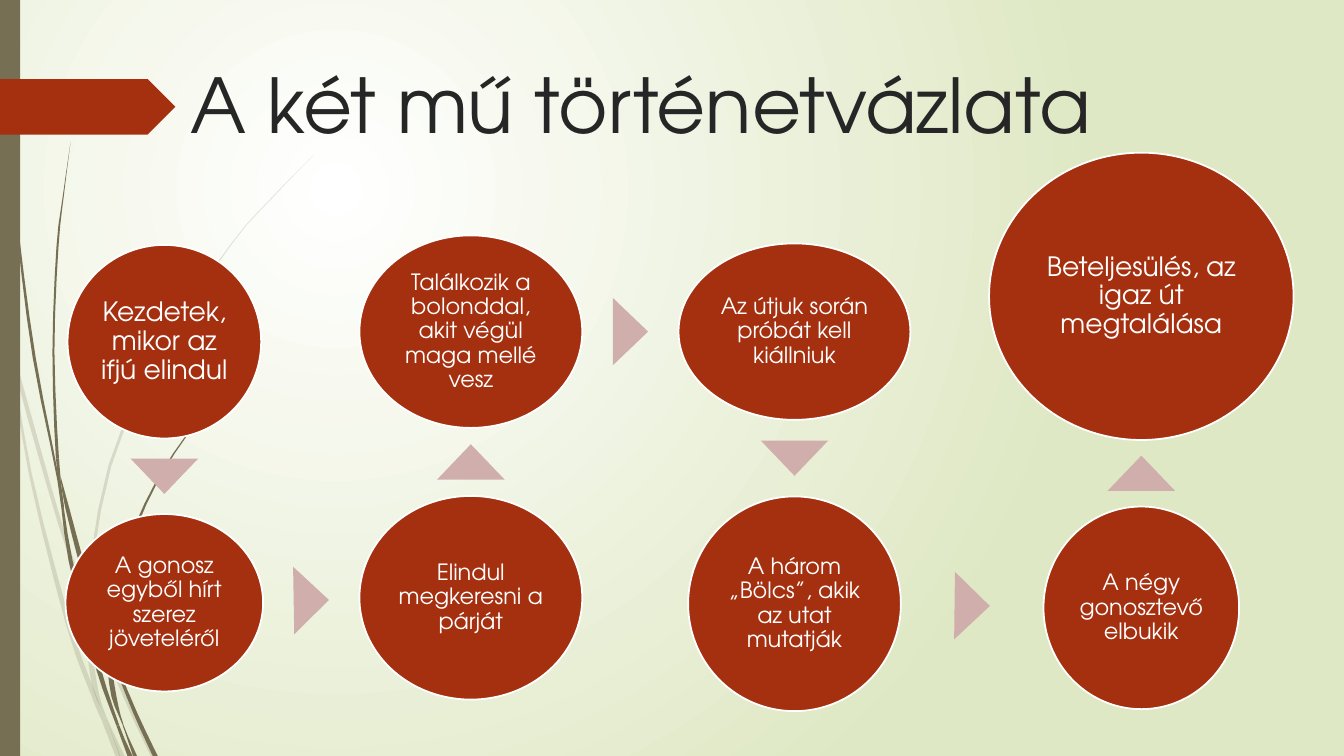
import math

from lxml import etree
from pptx import Presentation
from pptx import util as u
from pptx.dml.color import RGBColor
from pptx.enum import shapes, text
from pptx.oxml.ns import qn

WIDTH, HEIGHT = 13.33, 7.5
FONT = "TeX Gyre Adventor"
COLOURS = {"rust": "A53010", "rose": "CFAEAB", "olive": "766F54", "ink": "262626",
           "white": "FFFFFF", "pale green": "DFE8C4"}

TITLE = "A két mű történetvázlata"
COLUMNS = [1.63, 4.67, 7.88, 11.32]
# text, column, centre y, width, height, text size
STEPS = [
    ("Kezdetek, mikor az ifjú elindul", 0, 3.39, 1.92, 1.92, 19),
    ("A gonosz egyből hírt szerez jöveteléről", 0, 5.98, 1.96, 1.76, 16),
    ("Elindul megkeresni a párját", 1, 5.93, 2.21, 2.02, 16),
    ("Találkozik a bolonddal, akit végül maga mellé vesz", 1, 3.29, 2.21, 1.91, 16),
    ("Az útjuk során próbát kell kiállniuk", 2, 3.29, 2.3, 1.75, 16),
    ("A három „Bölcs”, akik az utat mutatják", 2, 5.99, 2.11, 2.13, 16),
    ("A négy gonosztevő elbukik", 3, 6.03, 1.94, 2.01, 16),
    ("Beteljesülés, az igaz út megtalálása", 3, 2.94, 3.02, 2.85, 19),
]
ARROW_WIDTH, ARROW_HEIGHT = 0.67, 0.35

# Grass blades: spine points (x, y, breadth), then the numbers of the points at joints
FAINT_BLADES = [
    ([(0, 2.9, 0.04), (0.1, 3.47, 0.02), (0.3, 4.7, 0.03), (0.68, 6.2, 0.05),
      (0.93, 6.9, 0.05), (1.03, 7.14, 0.05), (1.17, 7.5, 0.05)], [1, 5]),
    ([(0.14, 3.45, 0), (0.19, 3.76, 0.04), (0.6, 5.21, 0.04), (0.85, 5.92, 0.03),
      (0.9, 6.07, 0.04), (1.25, 6.93, 0.04), (1.52, 7.5, 0.05)], [3, 4]),
    ([(3.12, 1.53, 0), (2.68, 1.98, 0.01), (2.28, 2.44, 0.01), (1.59, 3.49, 0.03),
      (1.09, 4.62, 0.03), (0.87, 5.84, 0.03), (0.86, 6.05, 0.04), (0.89, 6.46, 0.05),
      (0.95, 6.85, 0.05), (1.05, 7.11, 0.01), (1.21, 7.5, 0.05)], [6, 9]),
]
DARK_BLADES = [
    ([(0.04, 0, 0.01), (0.06, 1.1, 0.01), (0.18, 2.33, 0.02), (0.34, 3.55, 0.03),
      (0.58, 4.77, 0.02), (0.7, 5.56, 0.04), (0.96, 6.58, 0.05), (1.17, 7.2, 0.03),
      (1.29, 7.5, 0.05)], [4, 7]),
    ([(0.6, 4.72, 0), (0.67, 5.05, 0.04), (0.9, 5.91, 0.05), (1.07, 6.38, 0.03),
      (1.1, 6.48, 0.03), (1.34, 7.07, 0.04), (1.54, 7.5, 0.05)], [3, 4]),
    ([(0.7, 1.41, 0), (0.63, 1.93, 0.01), (0.57, 2.45, 0.02), (0.53, 3.49, 0.02),
      (0.57, 4.55, 0.03), (0.63, 5.03, 0.01)], [4]),
    ([(2.6, 3.44, 0), (2.31, 3.74, 0.01), (2.04, 4.06, 0.01), (1.57, 4.75, 0.02),
      (1.24, 5.52, 0.03), (1.08, 6.35, 0.04), (1.08, 6.55, 0.04), (1.13, 6.91, 0.05),
      (1.22, 7.19, 0.01), (1.34, 7.5, 0.04)], [5, 8]),
]
CURVE_STEPS = 3
UNITS = 1000  # outline units per inch


def colour(name):
    return RGBColor.from_string(COLOURS[name])


def paint(shape, fill, line=None):
    shape.shadow.inherit = False
    shape.fill.solid()
    shape.fill.fore_color.rgb = colour(fill)
    if line:
        shape.line.color.rgb = colour(line)
        shape.line.width = u.Pt(1.25)
    else:
        shape.line.fill.background()


def add_centred(page, kind, x, y, width, height):
    return page.shapes.add_shape(kind, u.Inches(x - width / 2), u.Inches(y - height / 2),
                                 u.Inches(width), u.Inches(height))


def style(para, size, name):
    for span in para.runs:
        span.font.name, span.font.size = FONT, u.Pt(size)
        span.font.color.rgb = colour(name)


def smooth(spine):
    """Return points of a Catmull-Rom curve through the spine."""
    padded = [spine[0], *spine, spine[-1]]
    points = []
    for a, b, c, d in zip(padded, padded[1:], padded[2:], padded[3:]):
        for t in (i / CURVE_STEPS for i in range(CURVE_STEPS)):
            points.append([q + t * (r - p) / 2 + t * t * (2 * p - 5 * q + 4 * r - s) / 2
                           + t ** 3 * (3 * q - p - 3 * r + s) / 2
                           for p, q, r, s in zip(a, b, c, d)])
    return points + [spine[-1]]


def add_blade(page, spine, joints, opacity):
    points = smooth(spine)
    ends = [0, *joints, len(spine) - 1]
    for first, last in zip(ends, ends[1:]):
        part = points[first * CURVE_STEPS:last * CURVE_STEPS + 1]
        outline = [(x - breadth / 2, y) for x, y, breadth in part]
        outline += [(x + breadth / 2, y) for x, y, breadth in reversed(part)]
        outline = [(max(x, 0) * UNITS, y * UNITS) for x, y in outline]
        builder = page.shapes.build_freeform(*outline[0], scale=u.Inches(1) / UNITS)
        builder.add_line_segments(outline[1:], close=True)
        blade = builder.convert_to_shape()
        paint(blade, "olive")
        if opacity < 100:
            tint = blade._element.spPr.find(".//" + qn("a:srgbClr"))
            etree.SubElement(tint, qn("a:alpha"), val=str(opacity * 1000))


def add_background(page):
    fill = page.background.fill
    fill.gradient()
    for stop, name in zip(fill.gradient_stops, ("white", "pale green")):
        stop.color.rgb = colour(name)
    linear = page._element.find(".//" + qn("a:lin"))
    radial = etree.Element(qn("a:path"), attrib={"path": "circle"})
    etree.SubElement(radial, qn("a:fillToRect"), l="50000", t="50000", r="100000", b="100000")
    linear.getparent().replace(linear, radial)


def add_step(page, words, column, y, width, height, size):
    circle = add_centred(page, shapes.MSO_SHAPE.OVAL, COLUMNS[column], y, width, height)
    paint(circle, "rust", "white")
    frame = circle.text_frame
    frame.word_wrap = True
    frame.vertical_anchor = text.MSO_ANCHOR.MIDDLE
    frame.margin_left = frame.margin_right = u.Inches(0.02)
    frame.margin_top = frame.margin_bottom = u.Inches(0.02)
    frame.text = words
    para = frame.paragraphs[0]
    para.alignment = text.PP_ALIGN.CENTER
    para.line_spacing = 0.9
    style(para, size, "white")


def add_arrow(page, start, end):
    """Place a triangle midway in the gap between two steps, pointing to the second."""
    _, column, y1, width1, height1, _ = start
    _, next_column, y2, width2, height2, _ = end
    x1, x2 = COLUMNS[column], COLUMNS[next_column]
    x, y = (x1 + x2) / 2, (y1 + y2) / 2
    if column == next_column:
        y += math.copysign(1, y2 - y1) * (height1 - height2) / 4
    else:
        x += (width1 - width2) / 4
    arrow = add_centred(page, shapes.MSO_SHAPE.ISOSCELES_TRIANGLE, x, y,
                        ARROW_WIDTH, ARROW_HEIGHT)
    arrow.rotation = math.degrees(math.atan2(y2 - y1, x2 - x1)) + 90
    paint(arrow, "rose")


def main():
    deck = Presentation()
    deck.slide_width, deck.slide_height = u.Inches(WIDTH), u.Inches(HEIGHT)
    page = deck.slides.add_slide(deck.slide_layouts[5])
    add_background(page)

    for blades, opacity in ((FAINT_BLADES, 20), (DARK_BLADES, 100)):
        for spine, joints in blades:
            add_blade(page, spine, joints, opacity)
    paint(add_centred(page, shapes.MSO_SHAPE.RECTANGLE, 0.1, HEIGHT / 2, 0.2, HEIGHT), "olive")
    paint(add_centred(page, shapes.MSO_SHAPE.PENTAGON, 0.87, 1.06, 1.74, 0.55), "rust")

    for step in STEPS:
        add_step(page, *step)
    for start, end in zip(STEPS, STEPS[1:]):
        add_arrow(page, start, end)

    title = page.shapes.title
    title.left, title.top = u.Inches(1.79), u.Inches(0.52)
    title.width, title.height = u.Inches(10.75), u.Inches(1.3)
    title.text_frame.text = TITLE
    title.text_frame.vertical_anchor = text.MSO_ANCHOR.TOP
    title.text_frame.paragraphs[0].alignment = text.PP_ALIGN.LEFT
    style(title.text_frame.paragraphs[0], 54, "ink")

    deck.save("out.pptx")


if __name__ == "__main__":
    main()
